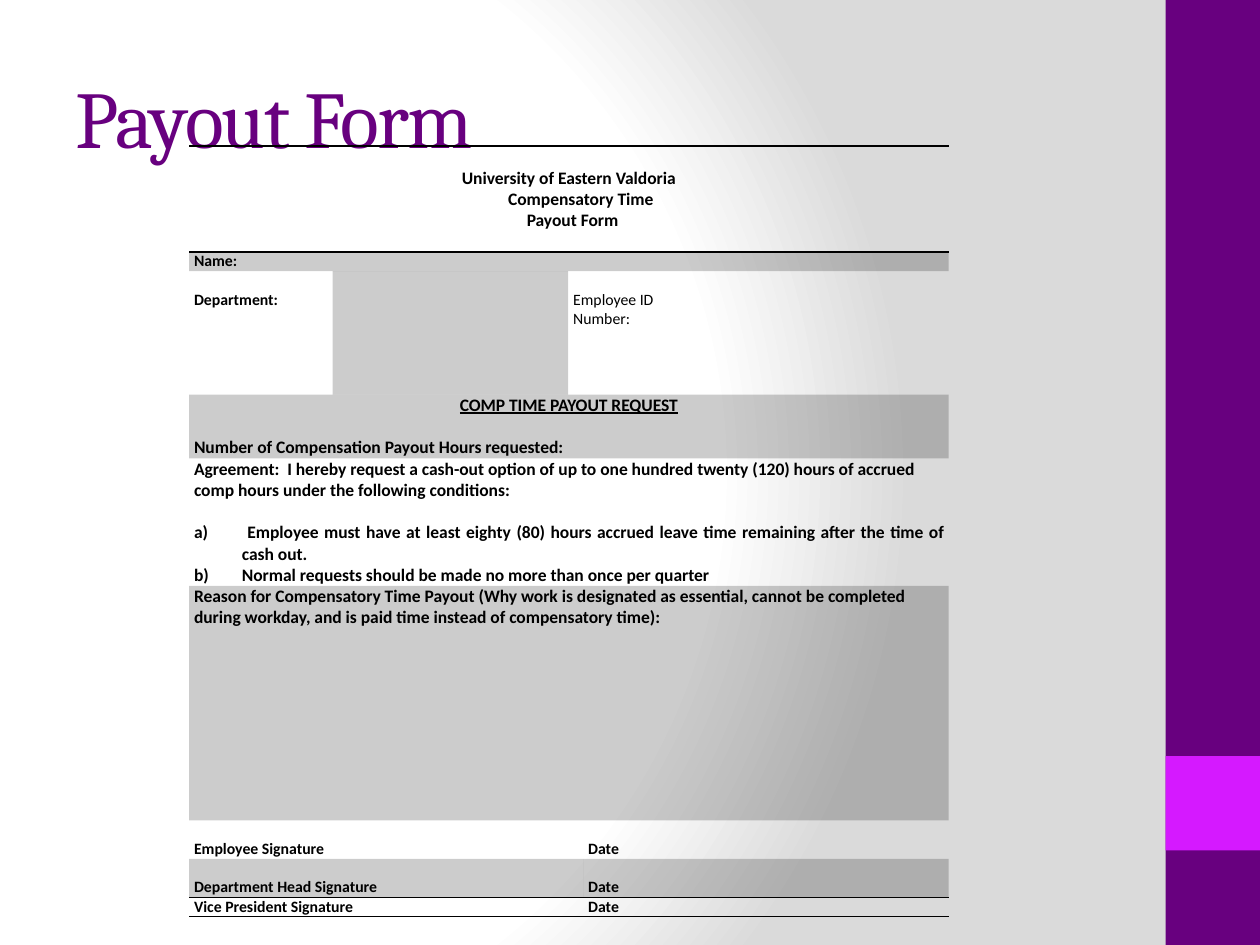
from lxml import etree
from pptx import Presentation
from pptx.dml.color import RGBColor
from pptx.enum.shapes import MSO_SHAPE
from pptx.enum.text import MSO_ANCHOR, PP_ALIGN
from pptx.oxml import parse_xml
from pptx.oxml.ns import qn
from pptx.util import Inches, Pt

RECT = MSO_SHAPE.RECTANGLE
MIDDLE, BOTTOM = MSO_ANCHOR.MIDDLE, MSO_ANCHOR.BOTTOM
LEFT, CENTER, JUSTIFY = PP_ALIGN.LEFT, PP_ALIGN.CENTER, PP_ALIGN.JUSTIFY
NS = 'xmlns:a="http://schemas.openxmlformats.org/drawingml/2006/main"'
NSP = 'xmlns:p="http://schemas.openxmlformats.org/presentationml/2006/main"'
NO_STYLE = "{2D5ABB26-0587-4C30-8999-92F81FD0307C}"
W, H = 10, 7.5
PURPLE, PINK, BLACK = "68007F", "D519FF", "000000"
LINE_9, LINE_10 = 11, 12.2  # height in points of one 9 or 10 pt line

COLS = [1.14, 1.87, 0.09, 0.61, 2.29]
ROWS = [0.84, 0.15, 0.98, 0.5, 1.01, 1.86, 0.3, 0.3, 0.15]


def color(value):
    return RGBColor.from_string(value)


def write(tf, text, first=False, size=10, bold=True, underline=False, font="Calibri",
          fill=BLACK, align=LEFT, before=0, indent=0, hanging=0, spacing=None):
    """Add one formatted paragraph; a hanging indent also numbers it a), b)."""
    p = tf.paragraphs[0] if first else tf.add_paragraph()
    p.alignment, p.space_before = align, Pt(before)
    pPr = p._p.get_or_add_pPr()
    if indent or hanging:
        pPr.set("marL", str(Inches(indent + hanging)))
        pPr.set("indent", str(-Inches(hanging)))
    if hanging:
        etree.SubElement(pPr, qn("a:buFont"), typeface="+mj-lt")
        etree.SubElement(pPr, qn("a:buAutoNum"), type="alphaLcParenR")
    r = p.add_run()
    r.text = text
    f = r.font
    f.name, f.size, f.bold, f.underline = font, Pt(size), bold, underline
    f.color.rgb = color(fill)
    if spacing:
        r._r.get_or_add_rPr().set("spc", str(spacing * 100))


def background(s):
    s._element.cSld.insert(0, parse_xml(
        f'<p:bg {NS} {NSP}><p:bgPr><a:gradFill rotWithShape="1"><a:gsLst>'
        '<a:gs pos="0"><a:srgbClr val="FFFFFF"/></a:gs>'
        '<a:gs pos="75000"><a:srgbClr val="FFFFFF"/></a:gs>'
        '<a:gs pos="100000"><a:srgbClr val="DADADA"/></a:gs></a:gsLst>'
        '<a:path path="circle"><a:fillToRect l="20000" t="50000" r="100000" b="50000"/>'
        '</a:path></a:gradFill><a:effectLst/></p:bgPr></p:bg>'))


def side_band(s, x, y, w, h):
    # Full-height band with a square accent
    for top, height, fill in ((y, h, PURPLE), (y + h * 0.8, w, PINK)):
        sp = s.shapes.add_shape(RECT, Inches(x), Inches(top), Inches(w), Inches(height))
        sp.shadow.inherit = False
        sp.fill.solid()
        sp.fill.fore_color.rgb = color(fill)
        sp.line.fill.background()


def title(s, text, x, y, w, h):
    sp = s.shapes.title
    sp.left, sp.top, sp.width, sp.height = map(Inches, (x, y, w, h))
    tf = sp.text_frame
    tf.word_wrap, tf.vertical_anchor = True, MIDDLE
    write(tf, text, first=True, size=46, bold=False, font="Cambria", fill=PURPLE, spacing=-1)


def rule(cell, width):
    """Rule a cell above and below."""
    tcPr = cell._tc.get_or_add_tcPr()
    for i, side in enumerate(("lnT", "lnB")):
        tcPr.insert(i, parse_xml(
            f'<a:{side} {NS} w="{Pt(width)}"><a:solidFill><a:srgbClr val="{BLACK}"/>'
            f'</a:solidFill><a:prstDash val="solid"/></a:{side}>'))


def fill_cell(table, row, col, span, paras=(), shaded=False, top=0, anchor=None, line=0):
    """Merge, fill and write one cell; top is the gap in points above its text."""
    cell = table.cell(row, col)
    if span > 1:
        cell.merge(table.cell(row, col + span - 1))
    cell.margin_left = cell.margin_right = Inches(0.04)
    cell.margin_top, cell.margin_bottom = Pt(top), 0
    if anchor is not None:
        cell.vertical_anchor = anchor
    if shaded:
        cell.fill.solid()
        cell.fill.fore_color.rgb = color(BLACK)
        clr = cell._tc.tcPr.find(".//" + qn("a:srgbClr"))
        etree.SubElement(clr, qn("a:alpha"), val="20000")
    else:
        cell.fill.background()
    if line:
        for c in range(col, col + span):
            rule(table.cell(row, c), line)
    for i, (text, fmt) in enumerate(paras):
        write(cell.text_frame, text, first=i == 0, **fmt)


def payout_form(s, x, y, w, h):
    t = s.shapes.add_table(len(ROWS), len(COLS), Inches(x), Inches(y), Inches(w), Inches(h)).table
    t.first_row = t.horz_banding = False
    t._tbl.tblPr.find(qn("a:tableStyleId")).text = NO_STYLE
    for col, width in zip(t.columns, COLS):
        col.width = Inches(w * width / sum(COLS))
    for row, height in zip(t.rows, ROWS):
        row.height = Inches(h * height / sum(ROWS))

    # Heading and employee details
    small, centered = dict(size=9), dict(align=CENTER)
    fill_cell(t, 0, 0, 5, [
        ("University of Eastern Valdoria", centered),
        ("Compensatory Time", dict(align=CENTER, indent=0.19)),
        ("Payout Form", dict(align=CENTER, indent=0.06))], top=LINE_10, line=1)
    fill_cell(t, 1, 0, 5, [("Name:", small)], shaded=True)
    fill_cell(t, 2, 0, 1, [("Department:", small)], top=LINE_9)
    fill_cell(t, 2, 1, 1, shaded=True)
    fill_cell(t, 2, 2, 2, [("Employee ID Number:", dict(size=9, bold=False))], top=LINE_9)
    fill_cell(t, 2, 4, 1)

    # Request, agreement and reason
    item = dict(align=JUSTIFY, hanging=0.38)
    fill_cell(t, 3, 0, 5, [
        ("COMP TIME PAYOUT REQUEST", dict(align=CENTER, underline=True)),
        ("Number of Compensation Payout Hours requested:", dict(before=LINE_10))], shaded=True)
    fill_cell(t, 4, 0, 5, [
        ("Agreement:  I hereby request a cash-out option of up to one hundred twenty (120) "
         "hours of accrued comp hours under the following conditions:", {}),
        (" Employee must have at least eighty (80) hours accrued leave time remaining "
         "after the time of cash out.", dict(item, before=LINE_10)),
        ("Normal requests should be made no more than once per quarter", item)])
    fill_cell(t, 5, 0, 5, [
        ("Reason for Compensatory Time Payout (Why work is designated as essential, cannot be "
         "completed during workday, and is paid time instead of compensatory time):", {})],
        shaded=True)

    # Signatures
    signers = [("Employee", dict(top=LINE_9)),
               ("Department Head", dict(top=LINE_9, shaded=True)),
               ("Vice President", dict(anchor=BOTTOM, line=0.75))]
    for row, (signer, fmt) in enumerate(signers, start=6):
        fill_cell(t, row, 0, 3, [(signer + " Signature", small)], **fmt)
        fill_cell(t, row, 3, 2, [("Date", small)], **fmt)


def main():
    prs = Presentation()
    prs.slide_width, prs.slide_height = Inches(W), Inches(H)
    s = prs.slides.add_slide(prs.slide_layouts[5])
    background(s)
    side_band(s, W * 0.925, 0, W * 0.075, H)
    title(s, "Payout Form", W * 0.05, H * 0.04, 8.33, 1.25)
    payout_form(s, W * 0.15, 1.16, sum(COLS), sum(ROWS))
    prs.save("out.pptx")


if __name__ == "__main__":
    main()
